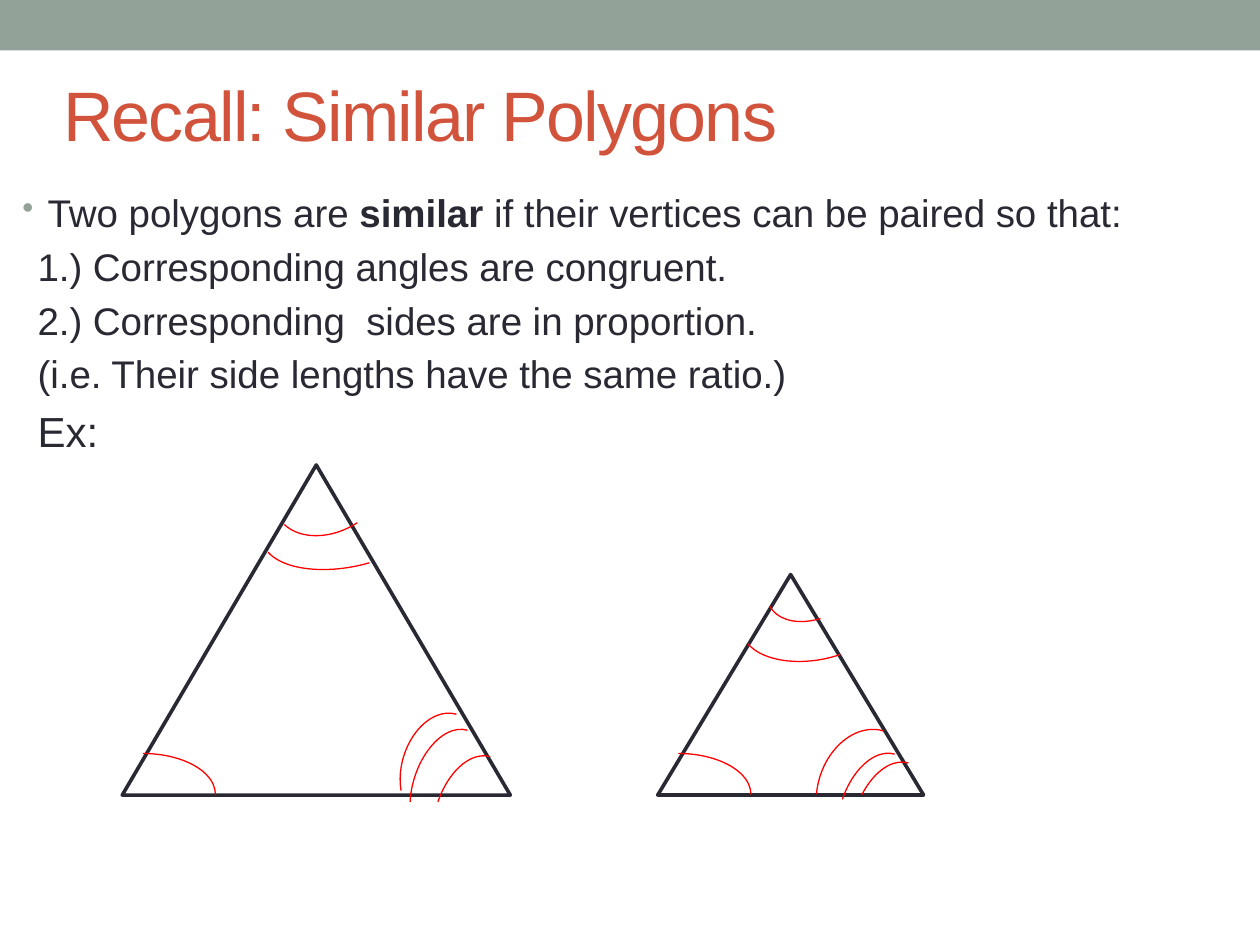
import dataclasses

import pptx
import pptx.dml.color
import pptx.enum.shapes
import pptx.enum.text
import pptx.oxml.ns
import pptx.util
from lxml import etree

Inches = pptx.util.Inches
Pt = pptx.util.Pt
KIND = pptx.enum.shapes.MSO_SHAPE
QN = pptx.oxml.ns.qn

SAGE, RUST, INK, RED, WHITE = "93A299", "D2533C", "292934", "FF0000", "FFFFFF"


@dataclasses.dataclass
class Box:
    left: float
    top: float
    width: float
    height: float


@dataclasses.dataclass
class Arc:
    box: Box
    turn: float = 0
    start: float = 270  # degrees, clockwise from the right
    end: float = 0


@dataclasses.dataclass
class Line:
    runs: list[tuple[str, bool]]
    size: int = 22
    bullet: bool = False


def color(code: str) -> pptx.dml.color.RGBColor:
    return pptx.dml.color.RGBColor.from_string(code)


def place(shape, box: Box) -> None:
    shape.left, shape.top = Inches(box.left), Inches(box.top)
    shape.width, shape.height = Inches(box.width), Inches(box.height)


def draw(slide, kind, box: Box, fill: str = "", line: str = "", width: float = 1):
    shape = slide.shapes.add_shape(kind, 0, 0, 0, 0)
    place(shape, box)
    shape.shadow.inherit = False
    if fill:
        shape.fill.solid()
        shape.fill.fore_color.rgb = color(fill)
    else:
        shape.fill.background()
    if line:
        shape.line.color.rgb = color(line)
        shape.line.width = Pt(width)
    else:
        shape.line.fill.background()
    return shape


def draw_arc(slide, arc: Arc) -> None:
    shape = draw(slide, KIND.ARC, arc.box, line=RED, width=0.75)
    shape.rotation = arc.turn
    # Angles count 60000 to the degree, adjustments 100000 to the unit
    shape.adjustments[0] = arc.start * 0.6
    shape.adjustments[1] = arc.end * 0.6


def write_line(para, line: Line) -> None:
    para.font.name = "Arial"
    para.font.size = Pt(line.size)
    para.font.color.rgb = color(INK)
    for text, bold in line.runs:
        run = para.add_run()
        run.text = text
        if bold:
            run.font.bold = True
    # Indent, space before and bullet, ahead of the font defaults
    props = para._p.get_or_add_pPr()
    left, first = (0.2, -0.2) if line.bullet else (0.12, 0)
    props.set("marL", str(Inches(left)))
    props.set("indent", str(Inches(first)))
    gap = etree.Element(QN("a:spcBef"))
    etree.SubElement(gap, QN("a:spcPct"), val="20000")
    parts = [gap]
    if line.bullet:
        tint = etree.Element(QN("a:buClr"))
        etree.SubElement(tint, QN("a:srgbClr"), val=SAGE)
        parts += [
            tint,
            etree.Element(QN("a:buSzPct"), val="85000"),
            etree.Element(QN("a:buChar"), char="•"),
        ]
    else:
        parts.append(etree.Element(QN("a:buNone")))
    for spot, part in enumerate(parts):
        props.insert(spot, part)


LINES = [
    Line(
        [
            ("Two polygons are ", False),
            ("similar", True),
            (" if their vertices can be paired so that:", False),
        ],
        bullet=True,
    ),
    Line([("1.) Corresponding angles are congruent.", False)]),
    Line([("2.) Corresponding  sides are in proportion.", False)]),
    Line([("(i.e. Their side lengths have the same ratio.)", False)]),
    Line([("Ex:", False)], size=24),
]

TRIANGLES = [Box(5.22, 4.56, 2.11, 1.75), Box(0.97, 3.69, 3.08, 2.62)]

TILT = 286.7  # shared turn of the arcs at the right corners
ARCS = [
    # Left corners
    Arc(Box(0.56, 5.98, 1.15, 0.65)),
    Arc(Box(4.81, 5.98, 1.15, 0.65)),
    # Top corners
    Arc(Box(2.15, 3.53, 0.94, 0.69), 152, 259.78, 349.74),
    Arc(Box(6.05, 4.29, 0.89, 0.6), 149.8, 297.13),
    Arc(Box(5.88, 4.59, 1.15, 0.65), 170.2, 242.62, 349.12),
    Arc(Box(2.07, 3.82, 1.37, 0.68), 168.5, 251.59, 351.93),
    # Right corner of the large triangle
    Arc(Box(3.26, 6.18, 0.98, 0.59), TILT, 275.24),
    Arc(Box(3.08, 5.97, 0.98, 0.59), TILT, 235.78),
    Arc(Box(3.05, 5.79, 0.89, 0.61), TILT, 223.2),
    # Right corner of the small triangle
    Arc(Box(6.58, 6.23, 0.98, 0.59), TILT, 296.94),
    Arc(Box(6.47, 6.16, 0.98, 0.59), TILT, 275.24),
    Arc(Box(6.37, 5.9, 1, 0.76), TILT, 250.05),
]


def main() -> None:
    deck = pptx.Presentation()
    deck.slide_width, deck.slide_height = Inches(10), Inches(7.5)
    slide = deck.slides.add_slide(deck.slide_layouts[5])

    # Top band and triangles
    draw(slide, KIND.RECTANGLE, Box(0, 0, 10, 0.4), fill=SAGE)
    for box in TRIANGLES:
        draw(slide, KIND.ISOSCELES_TRIANGLE, box, WHITE, INK, 2.08)

    # Title
    title = slide.shapes.title
    place(title, Box(0.4, 0.5, 9.03, 0.8))
    title.text_frame.text = "Recall: Similar Polygons"
    title.text_frame.vertical_anchor = pptx.enum.text.MSO_ANCHOR.MIDDLE
    head = title.text_frame.paragraphs[0]
    head.alignment = pptx.enum.text.PP_ALIGN.LEFT
    head.font.name = "Arial"
    head.font.size = Pt(40)
    head.font.color.rgb = color(RUST)
    head.runs[0].font._element.set("spc", "-100")

    # Definition
    body = slide.shapes.add_textbox(0, 0, 0, 0)
    place(body, Box(0.08, 1.45, 9.67, 2.47))
    frame = body.text_frame
    frame.word_wrap = True
    for spot, line in enumerate(LINES):
        para = frame.add_paragraph() if spot else frame.paragraphs[0]
        write_line(para, line)

    # Angle marks
    for arc in ARCS:
        draw_arc(slide, arc)

    deck.save("out.pptx")


if __name__ == "__main__":
    main()
